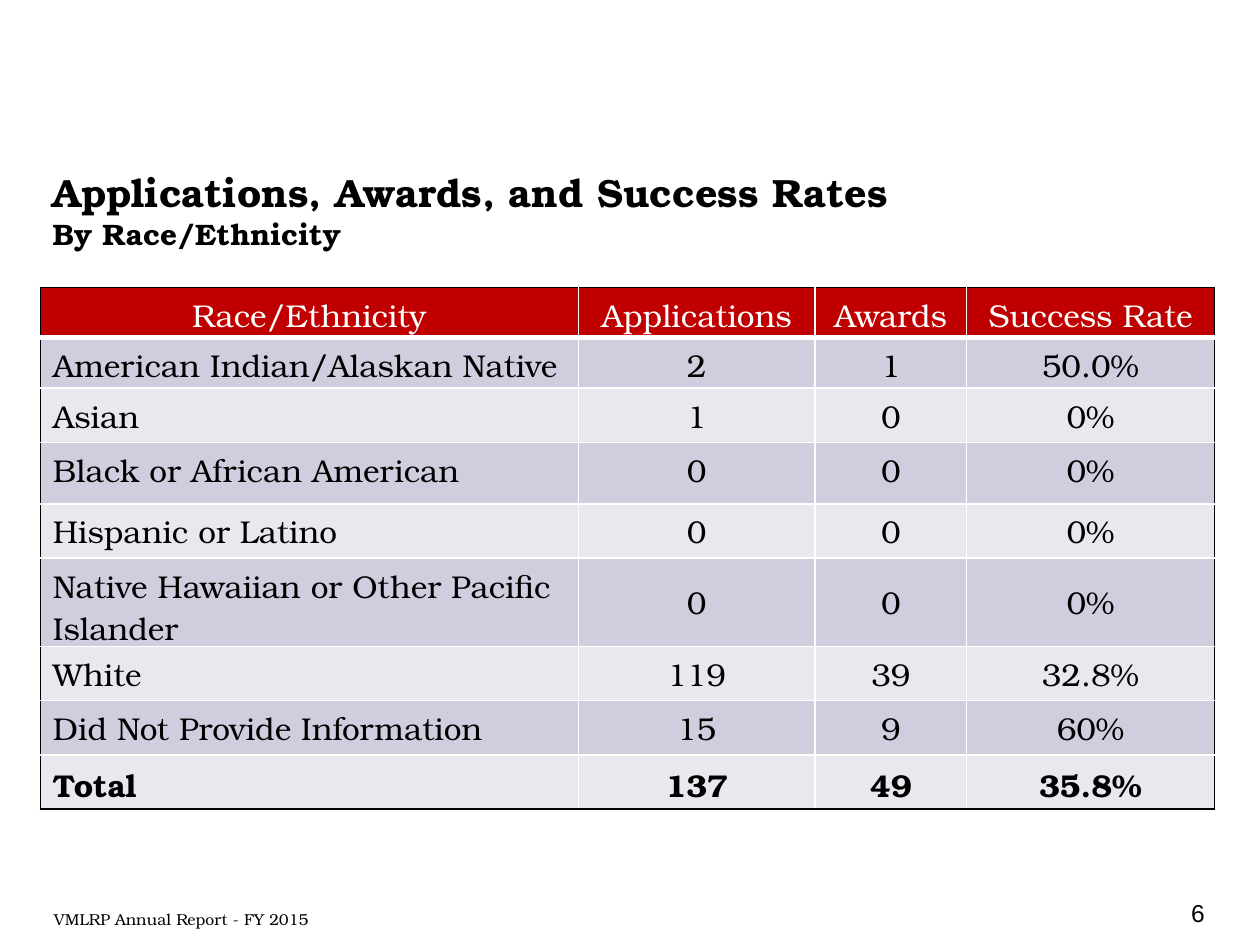
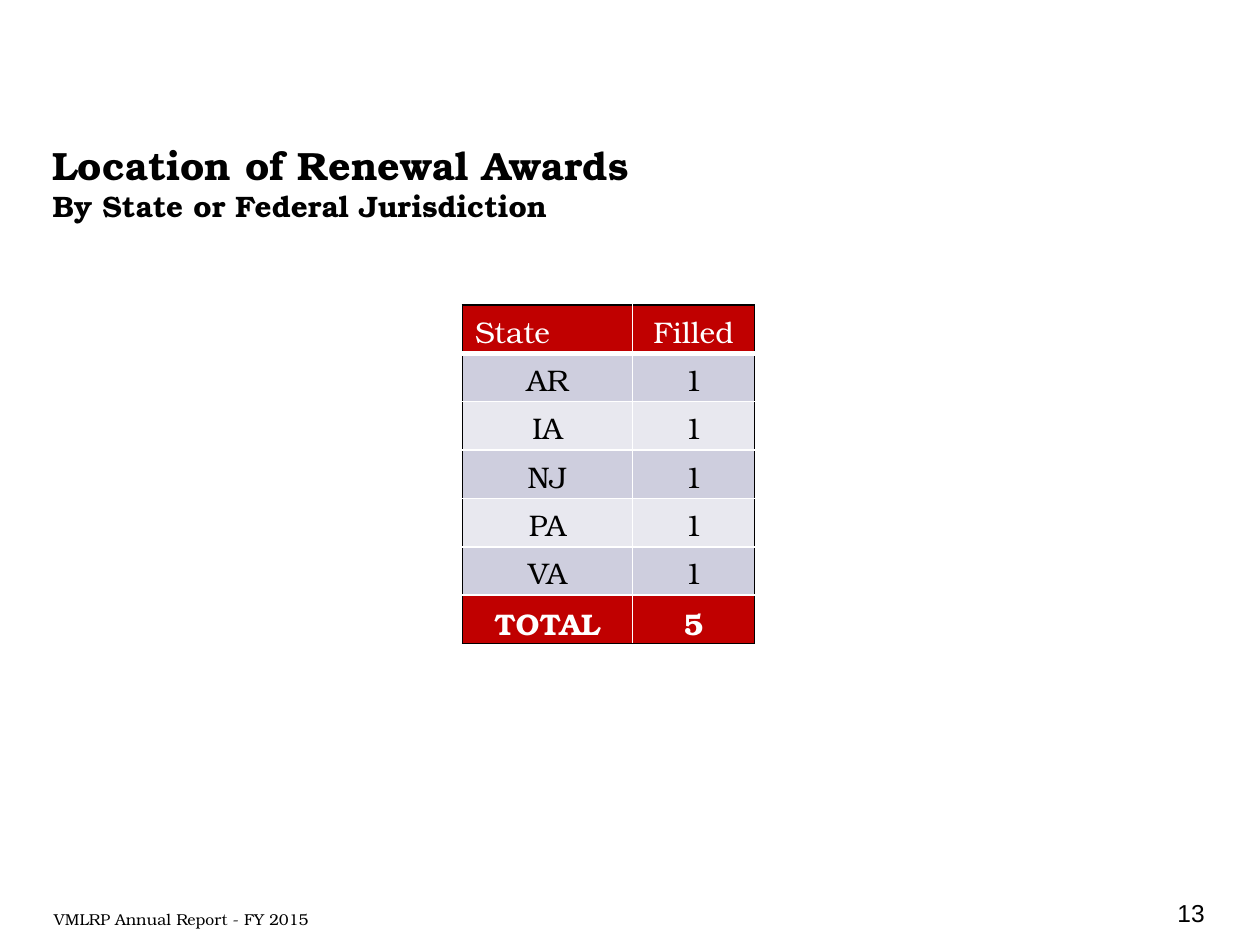
from dataclasses import dataclass

from lxml import etree
from pptx import Presentation
from pptx import util as u
from pptx.dml.color import RGBColor
from pptx.enum import text
from pptx.oxml.ns import qn


@dataclass(frozen=True)
class Theme:
    black: str = "000000"
    white: str = "FFFFFF"
    red: str = "C00000"
    bands: tuple = ("CECEDE", "E8E8EF")
    font: str = "TeX Gyre Bonum"
    number_font: str = "Arial"
    title_size: float = 22.5
    subtitle_size: float = 16.9
    footer_size: float = 9
    number_size: float = 14


theme = Theme()
LEFT, CENTER, RIGHT = text.PP_ALIGN.LEFT, text.PP_ALIGN.CENTER, text.PP_ALIGN.RIGHT


def style_paragraph(paragraph, size, color=theme.black, bold=False, align=LEFT, font=theme.font):
    paragraph.alignment = align
    paragraph.font.name = font
    paragraph.font.size = u.Pt(size)
    paragraph.font.bold = bold
    paragraph.font.color.rgb = RGBColor.from_string(color)


def add_text(slide, box, lines, anchor=text.MSO_ANCHOR.TOP):
    """Add a text box; each line is (wording, paragraph style)."""
    shape = slide.shapes.add_textbox(*map(u.Inches, box))
    frame = shape.text_frame
    frame.word_wrap = True
    frame.vertical_anchor = anchor
    for index, (wording, style) in enumerate(lines):
        paragraph = frame.add_paragraph() if index else frame.paragraphs[0]
        paragraph.text = wording
        style_paragraph(paragraph, **style)


pages = [
    {
        "title": "Applications, Awards, and Success Rates",
        "subtitle": "By Race/Ethnicity",
        "title_top": 1.25,
        "number": "6",
        "table_at": (0.32, 2.28),
        "columns": [4.27, 1.88, 1.2, 1.97],
        "row_heights": [0.4, 0.4, 0.43, 0.49] + [0.43] * 5,
        "size": 18,
        "header_align": CENTER,
        "label_align": LEFT,
        "red_total": False,
        "rows": [
            ("Race/Ethnicity", "Applications", "Awards", "Success Rate"),
            ("American Indian/Alaskan Native", "2", "1", "50.0%"),
            ("Asian", "1", "0", "0%"),
            ("Black or African American", "0", "0", "0%"),
            ("Hispanic or Latino", "0", "0", "0%"),
            ("Native Hawaiian or Other Pacific Islander", "0", "0", "0%"),
            ("White", "119", "39", "32.8%"),
            ("Did Not Provide Information", "15", "9", "60%"),
            ("Total", "137", "49", "35.8%"),
        ],
        "middle_row": 5,
    },
    {
        "title": "Location of Renewal Awards",
        "subtitle": "By State or Federal Jurisdiction",
        "title_top": 1.03,
        "number": "13",
        "table_at": (3.67, 2.42),
        "columns": [1.35, 0.97],
        "row_heights": [0.38] * 7,
        "size": 17,
        "header_align": LEFT,
        "label_align": CENTER,
        "red_total": True,
        "rows": [
            ("State", "Filled"),
            ("AR", "1"),
            ("IA", "1"),
            ("NJ", "1"),
            ("PA", "1"),
            ("VA", "1"),
            ("TOTAL", "5"),
        ],
        "middle_row": None,
    },
]

presentation = Presentation()
presentation.slide_width = u.Inches(10)
presentation.slide_height = u.Inches(7.5)

for page in pages:
    slide = presentation.slides.add_slide(presentation.slide_layouts[6])

    # Footer, title and slide number
    add_text(slide, (0.33, 7.17, 2.42, 0.5),
             [("VMLRP Annual Report - FY 2015", {"size": theme.footer_size})])
    add_text(slide, (0.32, page["title_top"], 9.27, 0.83),
             [(page["title"], {"size": theme.title_size, "bold": True}),
              (page["subtitle"], {"size": theme.subtitle_size, "bold": True})],
             text.MSO_ANCHOR.MIDDLE)
    add_text(slide, (7.58, 7.08, 2.08, 0.5),
             [(page["number"], {"size": theme.number_size, "align": RIGHT,
                                "font": theme.number_font})])

    # Table grid
    rows, columns, heights = page["rows"], page["columns"], page["row_heights"]
    left, top = page["table_at"]
    table = slide.shapes.add_table(
        len(rows), len(columns), u.Inches(left), u.Inches(top),
        u.Inches(sum(columns)), u.Inches(sum(heights))).table
    table.first_row = table.horz_banding = False
    for column, width in zip(table.columns, columns):
        column.width = u.Inches(width)
    for row, height in zip(table.rows, heights):
        row.height = u.Inches(height)

    # Cells: red header, banded body, bold total, black outer frame
    last_row, last_column = len(rows) - 1, len(columns) - 1
    for row_index, values in enumerate(rows):
        is_header, is_total = row_index == 0, row_index == last_row
        is_red = is_header or (is_total and page["red_total"])
        fill = theme.red if is_red else theme.bands[(row_index - 1) % 2]
        label_align = page["header_align"] if is_header else page["label_align"]
        for column_index, value in enumerate(values):
            cell = table.cell(row_index, column_index)
            cell.text = value
            style_paragraph(cell.text_frame.paragraphs[0], page["size"],
                            theme.white if is_red else theme.black, is_total,
                            CENTER if column_index else label_align)
            if row_index == page["middle_row"]:
                cell.vertical_anchor = text.MSO_ANCHOR.MIDDLE

            properties = cell._tc.get_or_add_tcPr()
            edges = {"L": column_index == 0, "R": column_index == last_column,
                     "T": is_header, "B": is_total}
            for side, is_outer in edges.items():
                points = 3 if is_header and side == "B" else 1
                line = etree.SubElement(properties, qn(f"a:ln{side}"), w=str(u.Pt(points)))
                paint = etree.SubElement(line, qn("a:solidFill"))
                etree.SubElement(paint, qn("a:srgbClr"),
                                 val=theme.black if is_outer else theme.white)
            cell.fill.solid()
            cell.fill.fore_color.rgb = RGBColor.from_string(fill)

presentation.save("out.pptx")
